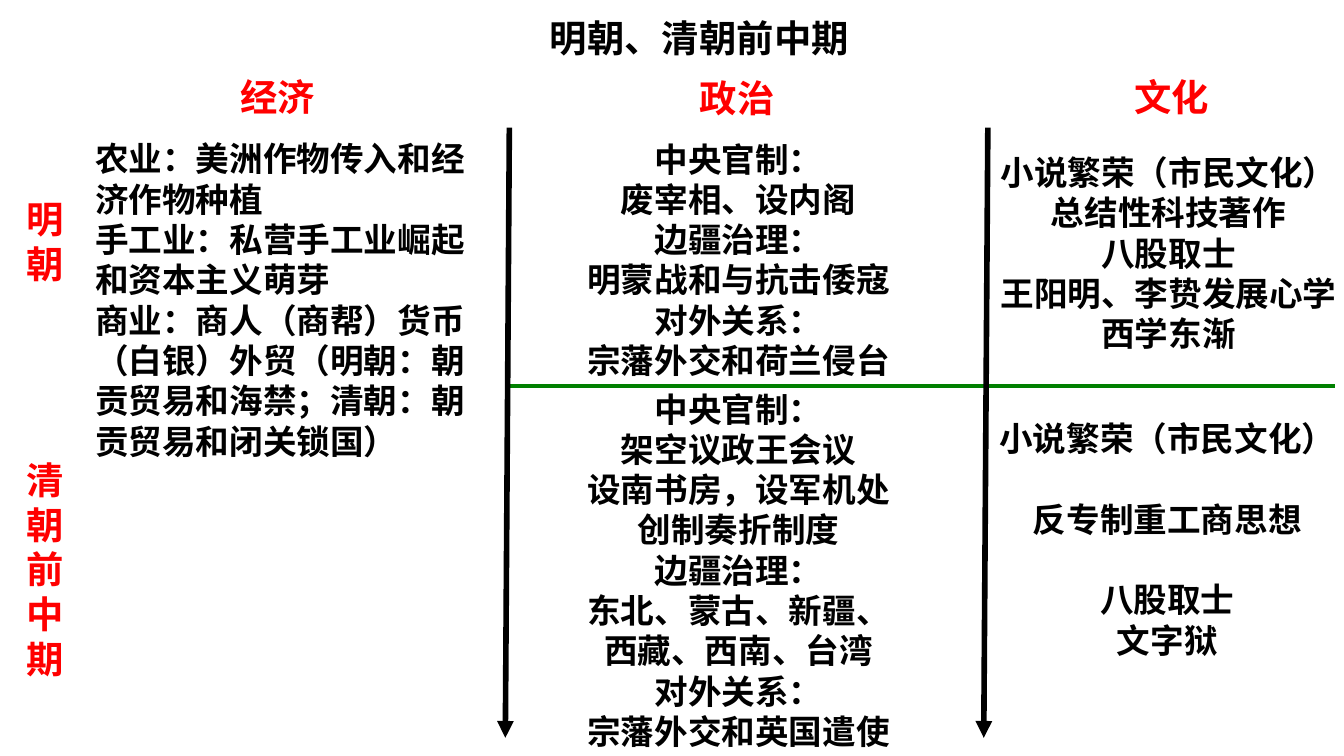
from dataclasses import dataclass

from lxml.etree import SubElement
from pptx import Presentation
from pptx.dml.color import RGBColor
from pptx.enum.shapes import MSO_CONNECTOR
from pptx.enum.text import MSO_ANCHOR, MSO_AUTO_SIZE, PP_ALIGN
from pptx.oxml.ns import qn
from pptx.util import Inches, Pt


@dataclass(frozen=True)
class Theme:
    """Colours, fonts and type sizes of the slide."""

    ink: RGBColor = RGBColor(0, 0, 0)
    red: RGBColor = RGBColor(255, 0, 0)
    green: RGBColor = RGBColor(0, 128, 0)
    han: str = "Noto Sans CJK SC"
    latin: str = "Calibri"
    head: int = 20
    body: int = 18
    pitch: float = 21.6
    stack: float = 24


THEME = Theme()

HEADS = [("经济", 1.69, 0.5), ("政治", 5.11, 0.51), ("文化", 8.34, 0.5)]
ERAS = [("明朝", 1.41, 0.77), ("清朝前中期", 3.35, 1.78)]
TRADE = [
    "农业：美洲作物传入和经济作物种植",
    "手工业：私营手工业崛起和资本主义萌芽",
    "商业：商人（商帮）货币（白银）外贸（明朝：朝贡贸易和海禁；清朝：朝贡贸易和闭关锁国）",
]
LISTS = [
    ((4.25, 0.98, 2.49, 1.92), (), [
        "中央官制：", "废宰相、设内阁", "边疆治理：",
        "明蒙战和与抗击倭寇", "对外关系：", "宗藩外交和荷兰侵台",
    ]),
    ((7.33, 1.08, 2.73, 1.62), (), [
        "小说繁荣（市民文化）", "总结性科技著作", "八股取士",
        "王阳明、李贽发展心学", "西学东渐",
    ]),
    ((4.23, 2.84, 2.53, 2.83), (), [
        "中央官制：", "架空议政王会议", "设南书房，设军机处",
        "创制奏折制度", "边疆治理：", "东北、蒙古、新疆、",
        "西藏、西南、台湾", "对外关系：", "宗藩外交和英国遣使",
    ]),
    ((7.32, 3.06, 2.73, 1.92), (1, 2), [
        "小说繁荣（市民文化）", "反专制重工商思想", "八股取士", "文字狱",
    ]),
]


def place(shape, box):
    """Move a shape to a box given in inches."""
    shape.left, shape.top, shape.width, shape.height = map(Inches, box)
    return shape


def write(shape, lines, *, size=THEME.body, color=THEME.ink, font=THEME.latin,
          pitch=THEME.pitch, align=PP_ALIGN.LEFT, wrap=False, gaps=()):
    """Fill a shape with bold lines; gaps lists the lines set one row lower."""
    frame = shape.text_frame
    frame.auto_size = MSO_AUTO_SIZE.NONE
    frame.word_wrap = wrap
    frame.vertical_anchor = MSO_ANCHOR.TOP
    frame.margin_left = frame.margin_right = Inches(0.1)
    frame.margin_top = frame.margin_bottom = Inches(0.05)
    for row, line in enumerate(lines):
        para = frame.add_paragraph() if row else frame.paragraphs[0]
        para.alignment = align
        para.line_spacing = Pt(pitch)
        para.space_before = Pt(pitch if row in gaps else 0)
        para.space_after = Pt(0)
        props = para._p.get_or_add_pPr()
        props.set("marL", "0")
        props.set("indent", "0")
        SubElement(props, qn("a:buNone"))
        run = para.add_run()
        run.text = line
        run.font.size = Pt(size)
        run.font.bold = True
        run.font.color.rgb = color
        run.font.name = font
        SubElement(run._r.get_or_add_rPr(), qn("a:ea"), typeface=THEME.han)


def label(slide, box, lines, **style):
    """Add a text box holding the lines."""
    write(slide.shapes.add_textbox(*map(Inches, box)), lines, **style)


def rule(slide, start, end, color, width, arrow=False):
    """Draw a straight line, with an arrowhead at its end if asked."""
    line = slide.shapes.add_connector(
        MSO_CONNECTOR.STRAIGHT, *map(Inches, (*start, *end)))
    line.line.color.rgb = color
    line.line.width = Pt(width)
    if arrow:
        SubElement(line.line._get_or_add_ln(), qn("a:tailEnd"), type="triangle")
    SubElement(line._element.spPr, qn("a:effectLst"))


def main():
    """Build the slide and save it."""
    deck = Presentation()
    deck.slide_width = Inches(10)
    deck.slide_height = deck.slide_width * 9 // 16
    slide = deck.slides.add_slide(deck.slide_layouts.get_by_name("Comparison"))
    head = dict(size=THEME.head, font=THEME.han, pitch=THEME.stack)

    title = place(slide.shapes.title, (3.99, 0.06, 2.45, 0.44))
    write(title, ["明朝、清朝前中期"], **head)
    rule(slide, (3.76, 2.87), (9.93, 2.87), THEME.green, 2.25)
    for name, top, tall in ERAS:
        label(slide, (0.1, top, 0.49, tall), [name], color=THEME.red,
              wrap=True, **head)
    for name, left, top in HEADS:
        label(slide, (left, top, 0.76, 0.44), [name], color=THEME.red, **head)
    for left in (3.79, 7.35):
        rule(slide, (left, 0.95), (left - 0.03, 5.49), THEME.ink, 3, arrow=True)

    for slot, (box, gaps, lines) in enumerate(LISTS, 1):
        write(place(slide.placeholders[slot], box), lines,
              align=PP_ALIGN.CENTER, gaps=gaps)
    label(slide, (0.61, 0.98, 3.15, 2.52), TRADE, wrap=True)
    deck.save("out.pptx")


if __name__ == "__main__":
    main()
